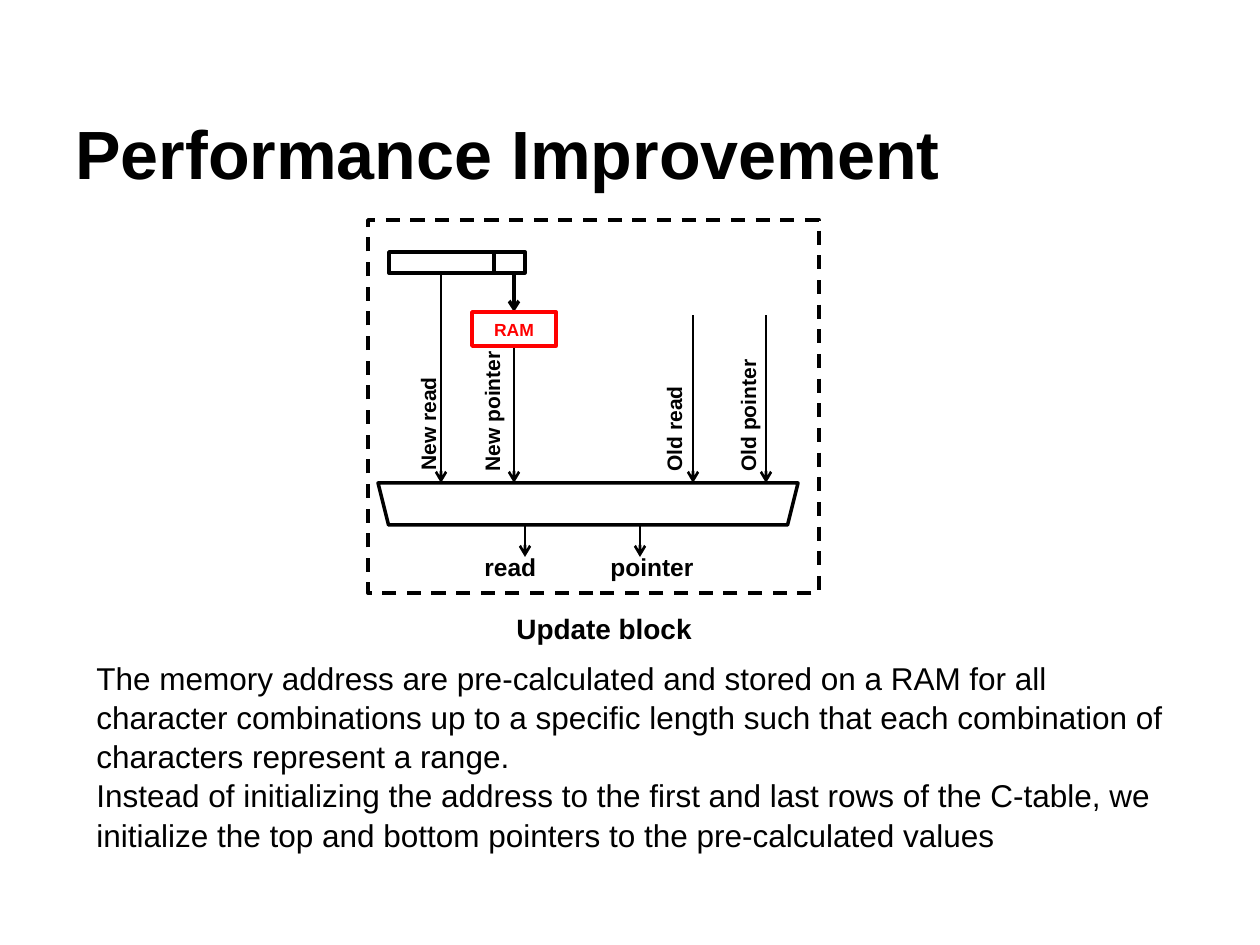
import dataclasses
import typing

import pptx
import pptx.dml.color
import pptx.enum.dml
import pptx.enum.shapes
import pptx.enum.text
import pptx.oxml.ns
import pptx.util
from lxml import etree

EMU_PER_PX = 914400 / 126
BLACK = "000000"
RED = "FF0000"
SHAPES = pptx.enum.shapes.MSO_SHAPE
ANCHORS = pptx.enum.text.MSO_ANCHOR
ALIGNMENTS = pptx.enum.text.PP_ALIGN


@dataclasses.dataclass
class Arrow:
    x: int
    top: int
    bottom: int
    width: float = 1.5
    has_head: bool = True


@dataclasses.dataclass
class Outline:
    kind: typing.Any
    box: tuple[int, int, int, int]
    color: str = BLACK
    rotation: int = 0
    dashed: bool = False


@dataclasses.dataclass
class Label:
    paragraphs: list[str]
    box: tuple[int, int, int, int]
    size: int
    bold: bool = True
    rotation: int = 0
    anchor: typing.Any = ANCHORS.TOP
    line_spacing: float = 1.0


def px(value: int) -> int:
    return round(value * EMU_PER_PX)


def rgb(value: str) -> pptx.dml.color.RGBColor:
    return pptx.dml.color.RGBColor.from_string(value)


def write_text(shape, paragraphs: list[str], size: int, color: str, bold: bool,
               line_spacing: float = 1.0, alignment=ALIGNMENTS.LEFT) -> None:
    frame = shape.text_frame
    frame.word_wrap = True
    frame.text = "\n".join(paragraphs)
    font_format = {"name": "Arial", "size": pptx.util.Pt(size), "bold": bold}
    for paragraph in frame.paragraphs:
        paragraph.alignment = alignment
        paragraph.line_spacing = line_spacing
        for run in paragraph.runs:
            for name, value in font_format.items():
                setattr(run.font, name, value)
            run.font.color.rgb = rgb(color)


def draw_arrow(slide, arrow: Arrow) -> None:
    connector = slide.shapes.add_connector(
        pptx.enum.shapes.MSO_CONNECTOR.STRAIGHT,
        px(arrow.x), px(arrow.top), px(arrow.x), px(arrow.bottom))
    connector.line.color.rgb = rgb(BLACK)
    connector.line.width = pptx.util.Pt(arrow.width)
    if arrow.has_head:
        line = connector.line._get_or_add_ln()
        etree.SubElement(line, pptx.oxml.ns.qn("a:tailEnd"), type="arrow")
    etree.SubElement(connector._element.spPr, pptx.oxml.ns.qn("a:effectLst"))


def draw_outline(slide, outline: Outline):
    shape = slide.shapes.add_shape(outline.kind, *map(px, outline.box))
    shape.shadow.inherit = False
    shape.rotation = outline.rotation
    shape.fill.background()
    shape.line.color.rgb = rgb(outline.color)
    shape.line.width = pptx.util.Pt(2)
    if outline.dashed:
        shape.line.dash_style = pptx.enum.dml.MSO_LINE.DASH
    return shape


def draw_label(slide, label: Label) -> None:
    shape = slide.shapes.add_textbox(*map(px, label.box))
    shape.rotation = label.rotation
    shape.text_frame.vertical_anchor = label.anchor
    write_text(shape, label.paragraphs, label.size, BLACK, label.bold, label.line_spacing)


MERGE_TOP = 483
REGISTER_BOTTOM = 273
OUTPUT_TOP = 525

OUTLINES = [
    Outline(SHAPES.RECTANGLE, (368, 220, 451, 373), dashed=True),
    Outline(SHAPES.RECTANGLE, (389, 252, 136, 21)),
    Outline(SHAPES.TRAPEZOID, (378, MERGE_TOP, 420, 42), rotation=180),
]
RAM = Outline(SHAPES.RECTANGLE, (472, 312, 84, 34), color=RED)

ARROWS = [
    Arrow(441, REGISTER_BOTTOM, MERGE_TOP),
    Arrow(514, 346, MERGE_TOP),
    Arrow(693, 315, MERGE_TOP),
    Arrow(766, 315, MERGE_TOP),
    Arrow(525, OUTPUT_TOP, 557),
    Arrow(640, OUTPUT_TOP, 557),
    Arrow(494, 252, REGISTER_BOTTOM, width=2, has_head=False),
    Arrow(514, REGISTER_BOTTOM, 312, width=2),
]

LABELS = [
    Label(["Performance Improvement"], (63, 94, 1134, 105), 39, anchor=ANCHORS.BOTTOM),
    Label(["New read"], (360, 396, 136, 38), 12, rotation=270),
    Label(["New pointer"], (413, 386, 158, 38), 12, rotation=270),
    Label(["Old read"], (595, 386, 158, 38), 12, rotation=270),
    Label(["Old pointer"], (669, 386, 158, 38), 12, rotation=270),
    Label(["read"], (472, 546, 105, 42), 14),
    Label(["pointer"], (598, 546, 116, 42), 14),
    Label(["Update block"], (504, 605, 210, 47), 16),
    Label(["The memory address are pre-calculated and stored on a RAM for all character "
           "combinations up to a specific length such that each combination of characters "
           "represent a range.",
           "Instead of initializing the address to the first and last rows of the C-table, "
           "we initialize the top and bottom pointers to the pre-calculated values"],
          (84, 651, 1092, 204), 18, bold=False, line_spacing=1.04),
]


def main() -> None:
    presentation = pptx.Presentation()
    presentation.slide_width = px(1260)
    presentation.slide_height = px(945)
    slide = presentation.slides.add_slide(presentation.slide_layouts[6])
    for outline in OUTLINES:
        draw_outline(slide, outline)
    for arrow in ARROWS:
        draw_arrow(slide, arrow)
    ram = draw_outline(slide, RAM)
    write_text(ram, ["RAM"], 10, RED, True, alignment=ALIGNMENTS.CENTER)
    for label in LABELS:
        draw_label(slide, label)
    presentation.save("out.pptx")


if __name__ == "__main__":
    main()
